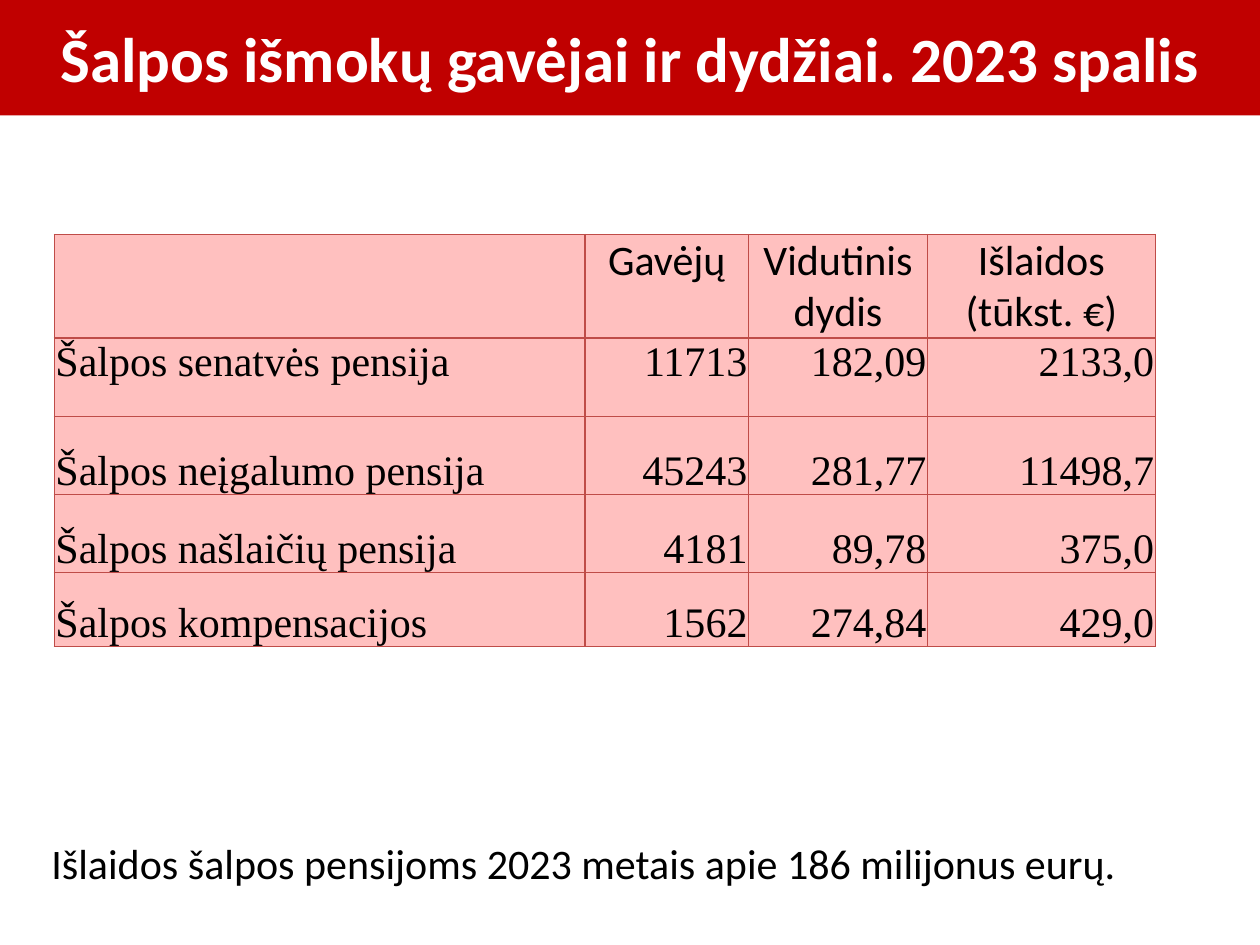
from lxml.etree import SubElement
from pptx import Presentation
from pptx.dml.color import RGBColor
from pptx.enum.shapes import MSO_SHAPE
from pptx.enum.text import MSO_ANCHOR, PP_ALIGN
from pptx.oxml.ns import qn
from pptx.util import Pt

RED = RGBColor(0xC0, 0x00, 0x00)
PINK = RGBColor(0xFF, 0xC0, 0xBF)
BORDER = RGBColor(0xBF, 0x4C, 0x48)
WHITE = RGBColor(0xFF, 0xFF, 0xFF)
BLACK = RGBColor(0x00, 0x00, 0x00)


def write(frame, text, font="Calibri", size=24, color=BLACK, bold=False,
          align=PP_ALIGN.LEFT):
    frame.word_wrap = True
    para = frame.paragraphs[0]
    para.alignment = align
    span = para.add_run()
    span.text = text
    span.font.name = font
    span.font.size = Pt(size)
    span.font.bold = bold
    span.font.color.rgb = color


def add_borders(cell):
    properties = cell._tc.get_or_add_tcPr()
    for position, side in enumerate(("a:lnL", "a:lnR", "a:lnT", "a:lnB")):
        line = properties.makeelement(qn(side), {"w": str(Pt(0.75))})
        fill = SubElement(line, qn("a:solidFill"))
        SubElement(fill, qn("a:srgbClr"), val=str(BORDER))
        properties.insert(position, line)


deck = Presentation()
deck.slide_width, deck.slide_height = Pt(720), Pt(540)
page = deck.slides.add_slide(deck.slide_layouts[6])

# Title band
band = page.shapes.add_shape(MSO_SHAPE.RECTANGLE, 0, 0, Pt(720), Pt(66))
band.shadow.inherit = False
band.fill.solid()
band.fill.fore_color.rgb = RED
band.line.fill.background()
band.text_frame.vertical_anchor = MSO_ANCHOR.MIDDLE
write(band.text_frame, "Šalpos išmokų gavėjai ir dydžiai. 2023 spalis",
      size=36, color=WHITE, bold=True, align=PP_ALIGN.CENTER)

# Benefits table
rows = [
    ("", "Gavėjų", "Vidutinis dydis", "Išlaidos (tūkst. €)"),
    ("Šalpos senatvės pensija", "11713", "182,09", "2133,0"),
    ("Šalpos neįgalumo pensija", "45243", "281,77", "11498,7"),
    ("Šalpos našlaičių pensija", "4181", "89,78", "375,0"),
    ("Šalpos kompensacijos", "1562", "274,84", "429,0"),
]
widths = [303.3, 93.5, 102.2, 130.2]
heights = [44.6, 44.6, 44.6, 44.6, 42.5]
table = page.shapes.add_table(len(rows), len(widths), Pt(31), Pt(133.9),
                              Pt(sum(widths)), Pt(sum(heights))).table
for column, width in zip(table.columns, widths):
    column.width = Pt(width)
for row, height in zip(table.rows, heights):
    row.height = Pt(height)

for r, texts in enumerate(rows):
    for c, text in enumerate(texts):
        cell = table.cell(r, c)
        cell.fill.solid()
        cell.fill.fore_color.rgb = PINK
        add_borders(cell)
        cell.margin_left = cell.margin_right = cell.margin_top = Pt(0.7)
        cell.margin_bottom = 0
        cell.vertical_anchor = MSO_ANCHOR.BOTTOM if r > 1 else MSO_ANCHOR.TOP
        if not text:
            continue
        if r == 0:
            write(cell.text_frame, text, align=PP_ALIGN.CENTER)
        else:
            write(cell.text_frame, text, font="Times New Roman",
                  align=PP_ALIGN.RIGHT if c else PP_ALIGN.LEFT)

# Closing note
note = page.shapes.add_textbox(Pt(22.3), Pt(475.2), Pt(657.4), Pt(36))
write(note.text_frame,
      "Išlaidos šalpos pensijoms 2023 metais apie 186 milijonus eurų.")

deck.save("out.pptx")
